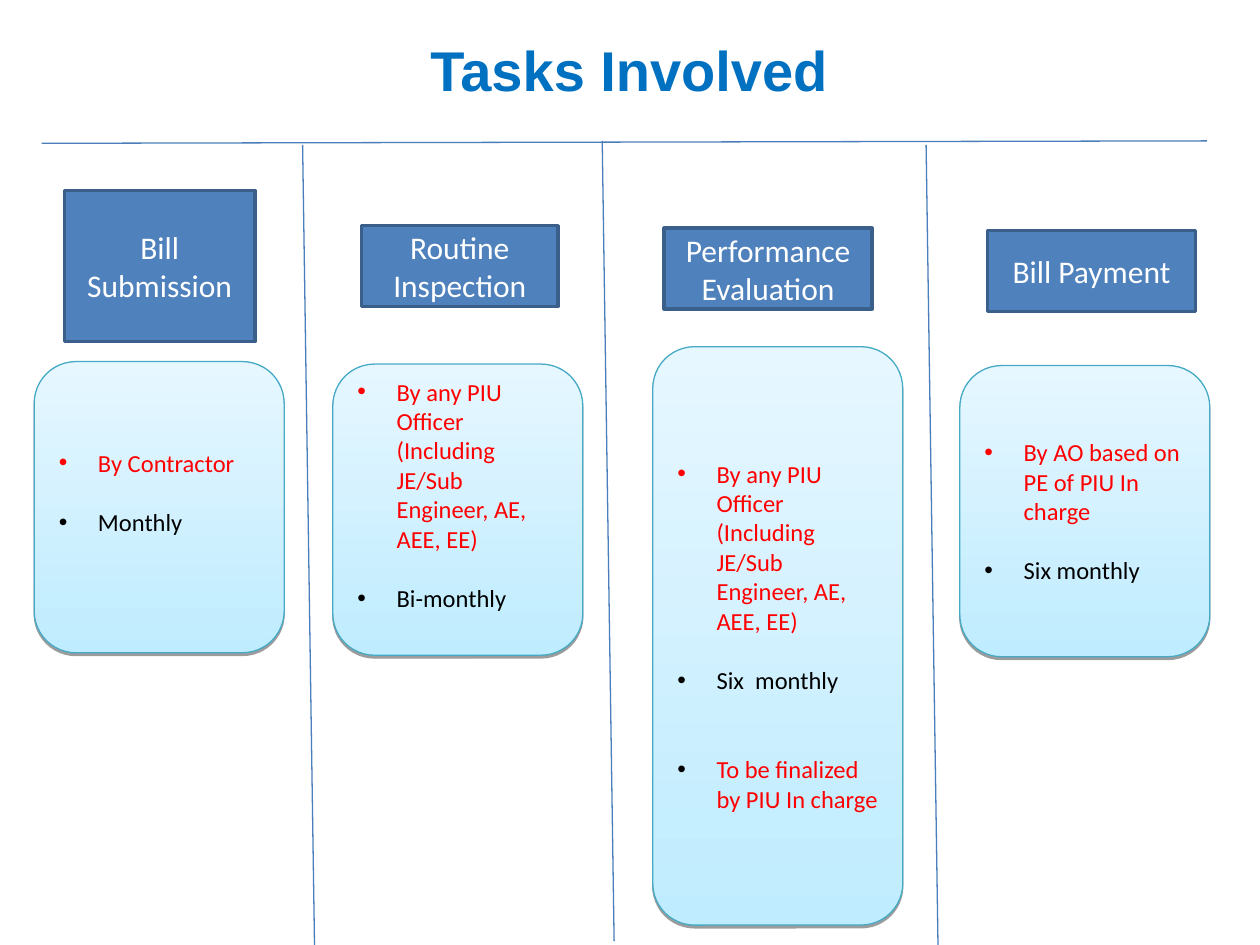
from dataclasses import dataclass

from lxml import etree
from pptx import Presentation
from pptx.dml.color import RGBColor
from pptx.enum.shapes import MSO_CONNECTOR, MSO_SHAPE
from pptx.enum.text import MSO_ANCHOR, PP_ALIGN
from pptx.oxml.ns import qn
from pptx.util import Cm, Pt

STRAIGHT = MSO_CONNECTOR.STRAIGHT
RECTANGLE = MSO_SHAPE.RECTANGLE
ROUNDED = MSO_SHAPE.ROUNDED_RECTANGLE
MIDDLE = MSO_ANCHOR.MIDDLE
LEFT, CENTER = PP_ALIGN.LEFT, PP_ALIGN.CENTER


@dataclass(frozen=True)
class Theme:
    """Colours, fonts and sizes of the slide."""
    title: str = "0070C0"
    heading_fill: str = "4F81BD"
    heading_line: str = "3A5F8B"
    heading_text: str = "FFFFFF"
    card_bottom: str = "BFECFF"
    card_top: str = "E6F7FF"
    card_line: str = "46AAC4"
    rule: str = "4A7EBB"
    accent: str = "FF0000"
    plain: str = "000000"
    title_font: str = "Arial"
    body_font: str = "Calibri"
    title_size: int = 32
    heading_size: int = 18
    body_size: int = 14
    blank_line: float = 17.1


@dataclass(frozen=True)
class Box:
    """A rectangle in centimetres."""
    left: float
    top: float
    width: float
    height: float

    def lengths(self):
        """Return the four sides as slide lengths."""
        return [Cm(side) for side in (self.left, self.top, self.width, self.height)]


@dataclass(frozen=True)
class Item:
    """One bullet: its text, colours and the blank lines above it."""
    text: str
    color: str
    bullet: str
    gap: int = 0


THEME = Theme()


def rgb(code):
    """Turn a hex code into a colour."""
    return RGBColor.from_string(code)


def style(para, font, size, color, bold=False, align=CENTER):
    """Format a paragraph and its runs."""
    para.alignment = align
    for span in para.runs:
        span.font.name = font
        span.font.size = Pt(size)
        span.font.bold = bold
        span.font.color.rgb = rgb(color)


def add_bullet(para, color):
    """Give a paragraph a hanging round bullet."""
    properties = para._p.get_or_add_pPr()
    properties.set("marL", str(Cm(0.79)))
    properties.set("indent", str(-Cm(0.79)))
    tint = etree.SubElement(properties, qn("a:buClr"))
    etree.SubElement(tint, qn("a:srgbClr"), val=color)
    etree.SubElement(properties, qn("a:buFont"), typeface="Arial")
    etree.SubElement(properties, qn("a:buChar"), char="•")


def add_shadow(shape):
    """Drop a sharp grey shadow just below a shape."""
    effects = shape._element.spPr.find(qn("a:effectLst"))
    shadow = etree.SubElement(effects, qn("a:outerShdw"), blurRad="0",
                              dist=str(Pt(1.6)), dir="5400000", rotWithShape="0")
    tint = etree.SubElement(shadow, qn("a:srgbClr"), val="000000")
    etree.SubElement(tint, qn("a:alpha"), val="38000")


def add_panel(page, kind, box, line, weight):
    """Add an outlined shape with middle-anchored wrapped text."""
    shape = page.shapes.add_shape(kind, *box.lengths())
    shape.shadow.inherit = False
    shape.line.color.rgb = rgb(line)
    shape.line.width = Pt(weight)
    shape.text_frame.word_wrap = True
    shape.text_frame.vertical_anchor = MIDDLE
    return shape


def add_title(page, box, text):
    """Write the slide title centred in the box."""
    frame = page.shapes.add_textbox(*box.lengths()).text_frame
    frame.word_wrap = True
    frame.vertical_anchor = MIDDLE
    frame.text = text
    style(frame.paragraphs[0], THEME.title_font, THEME.title_size, THEME.title, bold=True)


def add_heading(page, box, text):
    """Add the solid heading of a column."""
    shape = add_panel(page, RECTANGLE, box, THEME.heading_line, 2)
    shape.fill.solid()
    shape.fill.fore_color.rgb = rgb(THEME.heading_fill)
    shape.text_frame.text = text
    style(shape.text_frame.paragraphs[0], THEME.body_font, THEME.heading_size,
          THEME.heading_text)


def add_card(page, box, items, tail):
    """Add a rounded gradient card of bullets with tail blank lines below."""
    shape = add_panel(page, ROUNDED, box, THEME.card_line, 0.75)
    shape.fill.gradient()
    shape.fill.gradient_angle = 90
    for stop, color in zip(shape.fill.gradient_stops, (THEME.card_bottom, THEME.card_top)):
        stop.color.rgb = rgb(color)
    add_shadow(shape)
    frame = shape.text_frame
    frame.margin_bottom = Cm(0.13) + Pt(tail * THEME.blank_line)
    frame.text = "\n".join(item.text for item in items)
    for para, item in zip(frame.paragraphs, items):
        add_bullet(para, item.bullet)
        para.space_before = Pt(item.gap * THEME.blank_line)
        style(para, THEME.body_font, THEME.body_size, item.color, align=LEFT)


def add_column(page, box, heading, inset, size, card_height, items, tail=0):
    """Put a heading at the top of the box and a card at its bottom."""
    add_heading(page, Box(box.left + inset, box.top, *size), heading)
    card_top = box.top + box.height - card_height
    add_card(page, Box(box.left, card_top, box.width, card_height), items, tail)


def add_line(page, *ends):
    """Draw a thin line between two points."""
    line = page.shapes.add_connector(STRAIGHT, *[Cm(end) for end in ends])
    line.line.color.rgb = rgb(THEME.rule)
    line.line.width = Pt(0.75)
    etree.SubElement(line._element.spPr, qn("a:effectLst"))


def add_dividers(page, box):
    """Draw the top rule and the slightly leaning column dividers."""
    for across, down in ((5.26, 0.08), (11.3, 0), (17.83, 0.08)):
        left, top = box.left + across, box.top + down
        add_line(page, left, top, left + 0.24, top + box.height - 0.08)
    add_line(page, box.left + box.width, box.top, box.left, box.top + 0.05)


def main():
    """Build the slide and save it."""
    deck = Presentation()
    deck.slide_width, deck.slide_height = Cm(25.4), Cm(19.05)
    page = deck.slides.add_slide(deck.slide_layouts[6])
    red, black = THEME.accent, THEME.plain
    officer = Item("By any PIU Officer (Including JE/Sub Engineer, AE, AEE, EE)", red, red)

    add_title(page, Box(1.27, -0.18, 22.83, 3.15), "Tasks Involved")
    add_column(page, Box(0.69, 3.84, 5.04, 9.32), "Bill Submission", 0.61, (3.84, 3.05), 5.87,
               [Item("By Contractor", red, red), Item("Monthly", black, black, 1)], tail=1)
    add_column(page, Box(6.71, 4.55, 5.04, 8.66), "Routine Inspection", 0.58, (3.96, 1.63), 5.87,
               [officer, Item("Bi-monthly", black, black, 1)], tail=1)
    add_column(page, Box(13.16, 4.6, 5.04, 14.05), "Performance Evaluation", 0.23, (4.19, 1.63),
               11.66, [officer, Item("Six  monthly", black, black, 1),
                       Item("To be finalized by PIU In charge", red, black, 2)])
    add_column(page, Box(19.35, 4.65, 5.04, 8.59), "Bill Payment", 0.56, (4.19, 1.63), 5.87,
               [Item("By AO based on PE of PIU In charge", red, red),
                Item("Six monthly", black, black, 1)])
    add_dividers(page, Box(0.84, 2.84, 23.49, 16.21))
    deck.save("out.pptx")


if __name__ == "__main__":
    main()
